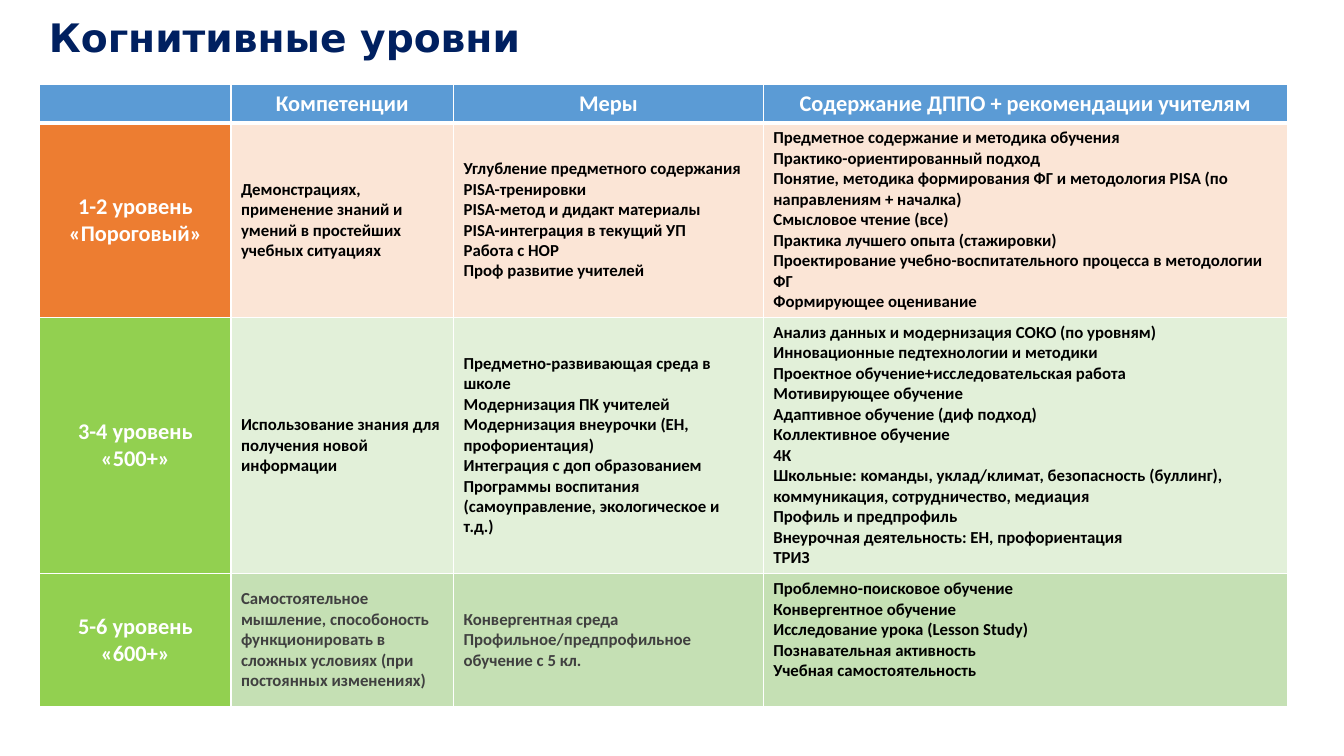
import pptx
import pptx.dml.color
import pptx.enum.text
import pptx.oxml
import pptx.oxml.ns
import pptx.util

ALIGN = pptx.enum.text.PP_ALIGN
MIDDLE = pptx.enum.text.MSO_ANCHOR.MIDDLE

WHITE, BLACK, GREY = "FFFFFF", "000000", "404040"
NAVY, BLUE, ORANGE, GREEN = "002060", "5B9BD5", "ED7D31", "92D050"
PEACH, PALE_GREEN, SOFT_GREEN = "FBE5D6", "E2F0D9", "C5E0B4"

HEADERS = ["", "Компетенции", "Меры", "Содержание ДППО + рекомендации учителям"]

# Each level: label fill, body fill, body text colours, lines of each cell
LEVELS = [
    (ORANGE, PEACH, [BLACK, BLACK, BLACK], [
        ["1-2 уровень", "«Пороговый»"],
        ["Демонстрациях, применение знаний и умений в простейших учебных ситуациях"],
        ["Углубление предметного содержания",
         "PISA-тренировки",
         "PISA-метод и дидакт материалы",
         "PISA-интеграция в текущий УП",
         "Работа с НОР\vПроф развитие учителей"],
        ["Предметное содержание и методика обучения",
         "Практико-ориентированный подход",
         "Понятие, методика формирования ФГ и методология PISA (по направлениям + началка)",
         "Смысловое чтение (все)",
         "Практика лучшего опыта (стажировки)",
         "Проектирование учебно-воспитательного процесса в методологии ФГ",
         "Формирующее оценивание"],
    ]),
    (GREEN, PALE_GREEN, [BLACK, BLACK, BLACK], [
        ["3-4 уровень", "«500+»"],
        ["Использование знания для получения новой информации"],
        ["Предметно-развивающая среда в школе",
         "Модернизация ПК учителей",
         "Модернизация внеурочки (ЕН, профориентация)",
         "Интеграция с доп образованием",
         "Программы воспитания (самоуправление, экологическое и т.д.)"],
        ["Анализ данных и модернизация СОКО (по уровням)",
         "Инновационные педтехнологии и методики",
         "Проектное обучение+исследовательская работа",
         "Мотивирующее обучение",
         "Адаптивное обучение (диф подход)",
         "Коллективное обучение",
         "4К",
         "Школьные: команды, уклад/климат, безопасность (буллинг), "
         "коммуникация, сотрудничество, медиация",
         "Профиль и предпрофиль",
         "Внеурочная деятельность: ЕН, профориентация",
         "ТРИЗ"],
    ]),
    (GREEN, SOFT_GREEN, [GREY, GREY, BLACK], [
        ["5-6 уровень", "«600+»"],
        ["Самостоятельное мышление, способоность функционировать в сложных условиях "
         "(при постоянных изменениях)"],
        ["Конвергентная среда",
         "Профильное/предпрофильное обучение с 5 кл."],
        ["Проблемно-поисковое обучение",
         "Конвергентное обучение",
         "Исследование урока (Lesson Study)",
         "Познавательная активность",
         "Учебная самостоятельность"],
    ]),
]


def px(length):
    return pptx.util.Emu(length * 9525)


def colour(hex_string):
    return pptx.dml.color.RGBColor.from_string(hex_string)


class SlideBuilder:
    title_font = "DejaVu Sans"
    table_font = "Calibri"

    def __init__(self, slide):
        self.slide = slide

    def set_text(self, text_frame, lines, font_name, size, text_colour, align):
        text_frame.text = "\n".join(lines)
        for paragraph in text_frame.paragraphs:
            paragraph.alignment = align
            font = paragraph.font
            font.name, font.size, font.bold = font_name, pptx.util.Pt(size), True
            font.color.rgb = colour(text_colour)

    def title(self, text, left, top, width, height):
        shape = self.slide.shapes.title
        shape.left, shape.top = px(left), px(top)
        shape.width, shape.height = px(width), px(height)
        text_frame = shape.text_frame
        self.set_text(text_frame, [text], self.title_font, 28, NAVY, ALIGN.LEFT)
        text_frame.vertical_anchor = MIDDLE
        text_frame.auto_size = pptx.enum.text.MSO_AUTO_SIZE.NONE
        text_frame.paragraphs[0].line_spacing = 0.9

    def table(self, left, top, widths, heights):
        frame = self.slide.shapes.add_table(
            len(heights), len(widths), px(left), px(top), px(sum(widths)), px(sum(heights)))
        table = frame.table
        for column, width in zip(table.columns, widths):
            column.width = px(width)
        for row, height in zip(table.rows, heights):
            row.height = px(height)
        return table

    def cell(self, cell, lines, fill, text_colour=WHITE, size=16, align=ALIGN.CENTER,
             top_line=1, bottom_line=1):
        self.borders(cell, top_line, bottom_line)
        cell.fill.solid()
        cell.fill.fore_color.rgb = colour(fill)
        cell.vertical_anchor = MIDDLE
        self.set_text(cell.text_frame, lines, self.table_font, size, text_colour, align)

    def borders(self, cell, top_line, bottom_line):
        """Draw white cell borders with the given top and bottom widths in points."""
        properties = cell._tc.get_or_add_tcPr()
        for side, width in (("L", 1), ("R", 1), ("T", top_line), ("B", bottom_line)):
            properties.append(pptx.oxml.parse_xml(
                f'<a:ln{side} {pptx.oxml.ns.nsdecls("a")} w="{pptx.util.Pt(width)}">'
                f'<a:solidFill><a:srgbClr val="{WHITE}"/></a:solidFill></a:ln{side}>'))


def main():
    presentation = pptx.Presentation()
    presentation.slide_width, presentation.slide_height = px(1280), px(720)
    slide = presentation.slides.add_slide(presentation.slide_layouts[5])
    builder = SlideBuilder(slide)

    builder.title("Когнитивные уровни", 37, 12, 970, 51)
    table = builder.table(38, 80, [182, 212, 295, 499], [37, 185, 244, 127])

    for column, header in enumerate(HEADERS):
        builder.cell(table.cell(0, column), [header], BLUE, bottom_line=3)

    for row, (label_fill, body_fill, text_colours, texts) in enumerate(LEVELS, start=1):
        top_line = 3 if row == 1 else 1
        label, *bodies = texts
        builder.cell(table.cell(row, 0), label, label_fill, top_line=top_line)
        for column, (lines, text_colour) in enumerate(zip(bodies, text_colours), start=1):
            builder.cell(table.cell(row, column), lines, body_fill, text_colour, 12,
                         ALIGN.LEFT, top_line)

    # The last list sits above the middle of its row
    table.cell(3, 3).margin_bottom = px(24)

    presentation.save("out.pptx")


if __name__ == "__main__":
    main()
